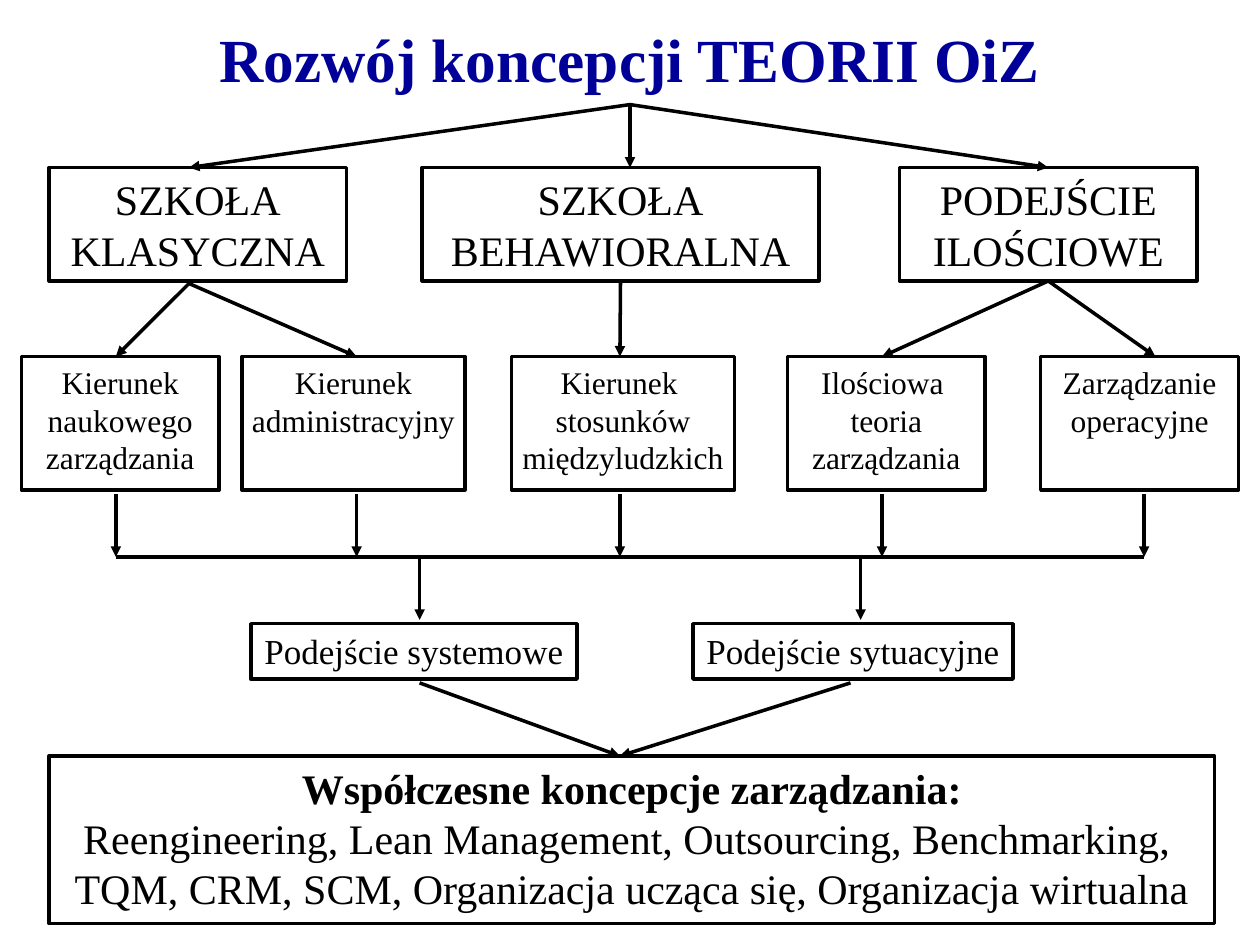
"""Build a slide that charts the development of management theory."""
from lxml import etree
from pptx import Presentation
from pptx.dml.color import RGBColor
from pptx.enum.shapes import MSO_CONNECTOR, MSO_SHAPE
from pptx.enum.text import MSO_ANCHOR, PP_ALIGN
from pptx.oxml.ns import qn
from pptx.util import Inches, Pt

BLACK = RGBColor(0x00, 0x00, 0x00)
NAVY = RGBColor(0x00, 0x00, 0x99)
CENTER = PP_ALIGN.CENTER
TOP, MIDDLE = MSO_ANCHOR.TOP, MSO_ANCHOR.MIDDLE
RECT, STRAIGHT = MSO_SHAPE.RECTANGLE, MSO_CONNECTOR.STRAIGHT
FONT = "Times New Roman"


def write(para, text, size, color=BLACK, bold=False):
    para.alignment = CENTER
    for i, part in enumerate(text.split("\n")):
        if i:
            para.add_line_break()
        run = para.add_run()
        run.text = part
        run.font.name = FONT
        run.font.size = Pt(size)
        run.font.bold = bold
        run.font.color.rgb = color


def link(start, end, arrow=True):
    line = slide.shapes.add_connector(STRAIGHT, *map(Inches, start + end))
    line.line.color.rgb = BLACK
    line.line.width = Pt(2)
    if arrow:
        etree.SubElement(line.line._get_or_add_ln(), qn("a:tailEnd"), type="triangle")
    etree.SubElement(line._element.spPr, qn("a:effectLst"))
    if start in joints:
        line.begin_connect(*joints[start])
    if end in joints:
        line.end_connect(*joints[end])


prs = Presentation()
prs.slide_width, prs.slide_height = Inches(10), Inches(7.5)
slide = prs.slides.add_slide(prs.slide_layouts[6])

title = slide.shapes.add_textbox(Inches(0.75), Inches(0.17), Inches(8.5), Inches(0.58))
title.text_frame.word_wrap = True
title.text_frame.vertical_anchor = MIDDLE
write(title.text_frame.paragraphs[0], "Rozwój koncepcji TEORII OiZ", 35, NAVY, True)

rows = [
    (1.33, 0.9, 24, [
        (0.39, 2.36, ["SZKOŁA", "KLASYCZNA"]),
        (3.35, 3.15, ["SZKOŁA", "BEHAWIORALNA"]),
        (7.14, 2.36, ["PODEJŚCIE", "ILOŚCIOWE"]),
    ]),
    (2.83, 1.06, 18, [
        (0.17, 1.57, ["Kierunek", "naukowego", "zarządzania"]),
        (1.92, 1.77, ["Kierunek", "administracyjny"]),
        (4.06, 1.77, ["Kierunek ", "stosunków", "międzyludzkich"]),
        (6.25, 1.57, ["Ilościowa ", "teoria", "zarządzania"]),
        (8.26, 1.57, ["Zarządzanie", "operacyjne"]),
    ]),
    (4.95, 0.44, 20, [
        (1.99, 2.59, ["Podejście systemowe"]),
        (5.5, 2.54, ["Podejście sytuacyjne"]),
    ]),
    (6, 1.33, 24, [
        (0.39, 9.25, [
            "Współczesne koncepcje zarządzania:",
            "Reengineering, Lean Management, Outsourcing, Benchmarking, \n"
            "TQM, CRM, SCM, Organizacja ucząca się, Organizacja wirtualna",
        ]),
    ]),
]
boxes = []
for top, height, size, cells in rows:
    for left, width, texts in cells:
        box = slide.shapes.add_shape(RECT, *map(Inches, (left, top, width, height)))
        box.shadow.inherit = False
        box.fill.background()
        box.line.color.rgb = BLACK
        box.line.width = Pt(2)
        frame = box.text_frame
        frame.word_wrap = False
        frame.vertical_anchor = TOP
        for i, text in enumerate(texts):
            para = frame.add_paragraph() if i else frame.paragraphs[0]
            write(para, text, size, bold=text.endswith(":"))
        boxes.append(box)

joints = {
    (8.33, 1.33): (boxes[2], 0),
    (4.92, 2.25): (boxes[1], 2),
    (8.33, 2.25): (boxes[2], 2),
}
for x in (1.5, 5, 8.33):
    link((5, 0.83), (x, 1.33))
for x, goals in ((1.5, (0.92, 2.83)), (4.92, (4.92,)), (8.33, (7, 9.17))):
    for goal in goals:
        link((x, 2.25), (goal, 2.83))
for x in (0.92, 2.83, 4.92, 7, 9.08):
    link((x, 3.92), (x, 4.42))
link((0.92, 4.42), (9.08, 4.42), arrow=False)
for x, base in ((3.33, 3.33), (6.83, 6.75)):
    link((x, 4.42), (x, 4.92))
    link((base, 5.42), (4.92, 6))

prs.save("out.pptx")
